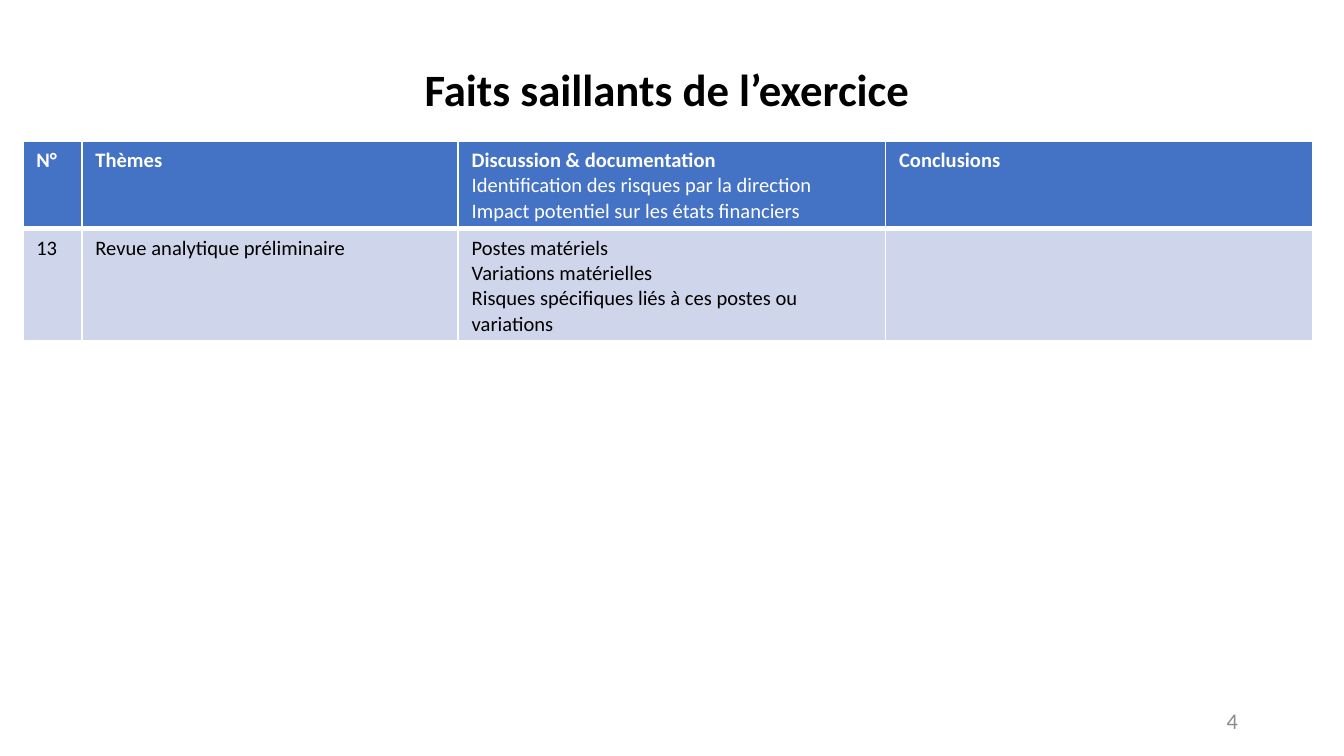
from lxml.etree import SubElement
from pptx import Presentation
from pptx.dml.color import RGBColor
from pptx.enum.text import MSO_ANCHOR, PP_ALIGN
from pptx.oxml.ns import qn
from pptx.util import Inches, Pt

FONT = "Calibri"
BLACK = RGBColor(0x00, 0x00, 0x00)
WHITE = RGBColor(0xFF, 0xFF, 0xFF)
GREY = RGBColor(0x8C, 0x8C, 0x8C)
BLUE = RGBColor(0x44, 0x72, 0xC4)
PALE_BLUE = RGBColor(0xCF, 0xD5, 0xEA)

COL_WIDTHS = [0.44, 2.8, 3.18, 3.18]
ROW_HEIGHTS = [0.57, 0.51]
HEADER = [
    ["N°"],
    ["Thèmes"],
    ["Discussion & documentation",
     "Identification des risques par la direction",
     "Impact potentiel sur les états financiers"],
    ["Conclusions"],
]
TOPIC = [
    ["13"],
    ["Revue analytique préliminaire"],
    ["Postes matériels",
     "Variations matérielles",
     "Risques spécifiques liés à ces postes ou variations"],
    [],
]


def add_run(p, text, size, color, bold=False):
    """Add one styled run to a paragraph."""
    r = p.add_run()
    r.text = text
    r.font.name = FONT
    r.font.size = Pt(size)
    r.font.bold = bold
    r.font.color.rgb = color


def add_label(s, box, text, size, color, align, bold=False, spacing=1.0):
    """Place a vertically centred line of text in a box."""
    tf = s.shapes.add_textbox(*map(Inches, box)).text_frame
    tf.word_wrap = True
    tf.vertical_anchor = MSO_ANCHOR.MIDDLE
    p = tf.paragraphs[0]
    p.alignment = align
    p.line_spacing = spacing
    add_run(p, text, size, color, bold)


def set_borders(cell, top, bottom):
    """Draw white cell borders, one point wide at the sides."""
    tc_pr = cell._tc.get_or_add_tcPr()
    widths = {"a:lnL": 1, "a:lnR": 1, "a:lnT": top, "a:lnB": bottom}
    for tag, width in widths.items():
        ln = SubElement(tc_pr, qn(tag), w=str(Pt(width)))
        fill = SubElement(ln, qn("a:solidFill"))
        SubElement(fill, qn("a:srgbClr"), val=str(WHITE))


def fill_cell(cell, lines, fill, color, heading):
    """Colour a cell and write its lines, the first one bold in a heading."""
    set_borders(cell, 1, 3 if heading else 1)
    cell.fill.solid()
    cell.fill.fore_color.rgb = fill
    tf = cell.text_frame
    for i, line in enumerate(lines):
        p = tf.paragraphs[0] if i == 0 else tf.add_paragraph()
        add_run(p, line, 11, color, heading and i == 0)


def add_topics_table(s, box):
    """Place the table of themes, discussion and conclusions."""
    table = s.shapes.add_table(2, 4, *map(Inches, box)).table
    for col, width in zip(table.columns, COL_WIDTHS):
        col.width = Inches(width)
    for row, height in zip(table.rows, ROW_HEIGHTS):
        row.height = Inches(height)
    for c, (head, body) in enumerate(zip(HEADER, TOPIC)):
        fill_cell(table.cell(0, c), head, BLUE, WHITE, True)
        fill_cell(table.cell(1, c), body, PALE_BLUE, BLACK, False)


def main():
    """Build the slide and save it."""
    prs = Presentation()
    prs.slide_width, prs.slide_height = Inches(10), Inches(10 * 9 / 16)
    s = prs.slides.add_slide(prs.slide_layouts[6])
    add_label(s, (7.06, 5.21, 2.25, 0.3), "4", 12, GREY, PP_ALIGN.RIGHT)
    add_topics_table(s, (0.17, 1.05, sum(COL_WIDTHS), sum(ROW_HEIGHTS)))
    add_label(s, (0.69, 0.14, 8.62, 1.09), "Faits saillants de l’exercice ",
              24, BLACK, PP_ALIGN.CENTER, True, 0.9)
    prs.save("out.pptx")


if __name__ == "__main__":
    main()
